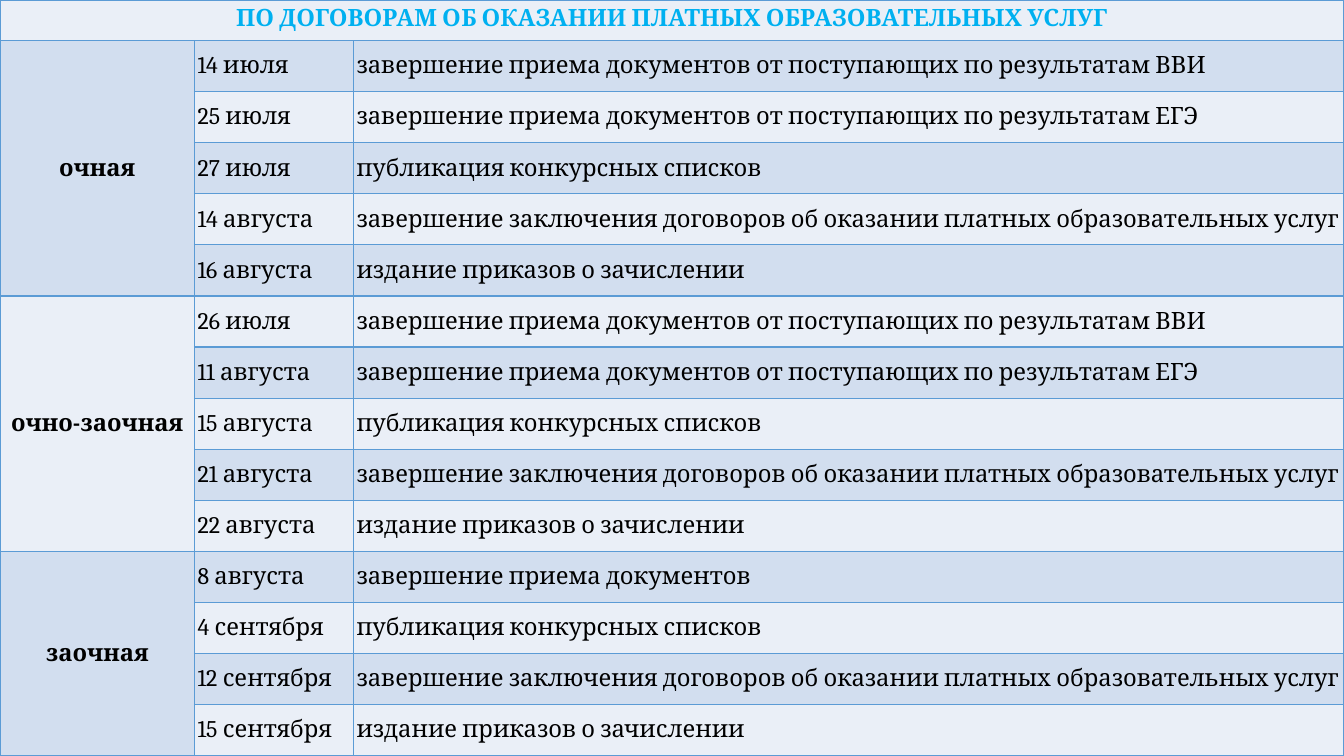
from lxml import etree
from pptx import Presentation
from pptx.dml.color import RGBColor
from pptx.enum.text import MSO_ANCHOR, PP_ALIGN
from pptx.oxml.ns import qn
from pptx.util import Pt

CENTER, LEFT = PP_ALIGN.CENTER, PP_ALIGN.LEFT
TOP, MIDDLE = MSO_ANCHOR.TOP, MSO_ANCHOR.MIDDLE

BLACK = RGBColor(0x00, 0x00, 0x00)
CYAN = RGBColor(0x00, 0xB0, 0xF0)
BORDER_BLUE = RGBColor(0x5B, 0x9B, 0xD5)
LIGHT_BAND = RGBColor(0xEA, 0xEF, 0xF7)
DARK_BAND = RGBColor(0xD2, 0xDE, 0xEF)

FONT_NAME = "Cambria"
FONT_SIZE = 17
SLIDE_WIDTH, SLIDE_HEIGHT = 960, 540
COLUMN_WIDTHS = (139, 113.5, 707.5)
HEADING_HEIGHT, ROW_HEIGHT = 29, 36.5

HEADING = "ПО ДОГОВОРАМ ОБ ОКАЗАНИИ ПЛАТНЫХ ОБРАЗОВАТЕЛЬНЫХ УСЛУГ"
DOCUMENTS = "завершение приема документов"
INTERNAL_EXAMS = DOCUMENTS + " от поступающих по результатам ВВИ"
STATE_EXAMS = DOCUMENTS + " от поступающих по результатам ЕГЭ"
RANKING = "публикация конкурсных списков"
CONTRACTS = "завершение заключения договоров об оказании платных образовательных услуг"
ENROLMENT = "издание приказов о зачислении"

FULL_STAGES = (INTERNAL_EXAMS, STATE_EXAMS, RANKING, CONTRACTS, ENROLMENT)
SHORT_STAGES = (DOCUMENTS, RANKING, CONTRACTS, ENROLMENT)
STUDY_FORMS = (
    ("очная", ("14 июля", "25 июля", "27 июля", "14 августа", "16 августа"), FULL_STAGES),
    ("очно-заочная",
     ("26 июля", "11 августа", "15 августа", "21 августа", "22 августа"), FULL_STAGES),
    ("заочная", ("8 августа", "4 сентября", "12 сентября", "15 сентября"), SHORT_STAGES),
)


def add_borders(cell):
    properties = cell._tc.get_or_add_tcPr()
    for side in ("a:lnL", "a:lnR", "a:lnT", "a:lnB"):
        line = etree.SubElement(properties, qn(side), w=str(Pt(1)))
        fill = etree.SubElement(line, qn("a:solidFill"))
        etree.SubElement(fill, qn("a:srgbClr"), val=str(BORDER_BLUE))


def add_schedule_table(slide):
    """Add the empty table with its grid, borders and alternating row fills."""
    row_count = 1 + sum(len(dates) for _, dates, _ in STUDY_FORMS)
    table = slide.shapes.add_table(
        row_count, len(COLUMN_WIDTHS), 0, 0, Pt(SLIDE_WIDTH), Pt(SLIDE_HEIGHT)
    ).table
    table.first_row = False
    table.horz_banding = False
    for column, width in zip(table.columns, COLUMN_WIDTHS):
        column.width = Pt(width)
    for index, row in enumerate(table.rows):
        row.height = Pt(ROW_HEIGHT if index else HEADING_HEIGHT)
        for cell in row.cells:
            add_borders(cell)
            cell.fill.solid()
            cell.fill.fore_color.rgb = DARK_BAND if index % 2 else LIGHT_BAND
    return table


def write_cell(cell, text, bold=False, color=BLACK, alignment=LEFT, anchor=MIDDLE):
    cell.vertical_anchor = anchor
    paragraph = cell.text_frame.paragraphs[0]
    paragraph.alignment = alignment
    run = paragraph.add_run()
    run.text = text
    run.font.name = FONT_NAME
    run.font.size = Pt(FONT_SIZE)
    run.font.bold = bold
    run.font.color.rgb = color


def write_entry(cell, text):
    """Write a date or stage with narrow side margins."""
    cell.margin_left = cell.margin_right = Pt(2.2)
    cell.margin_top = cell.margin_bottom = Pt(7.2)
    write_cell(cell, text)


def write_study_form(table, first_row, name, dates, stages):
    form_cell = table.cell(first_row, 0)
    form_cell.merge(table.cell(first_row + len(dates) - 1, 0))
    write_cell(form_cell, name, bold=True, alignment=CENTER)
    for row, (date, stage) in enumerate(zip(dates, stages), first_row):
        write_entry(table.cell(row, 1), date)
        write_entry(table.cell(row, 2), stage)


def main():
    presentation = Presentation()
    presentation.slide_width = Pt(SLIDE_WIDTH)
    presentation.slide_height = Pt(SLIDE_HEIGHT)
    blank_layout = presentation.slide_layouts[6]
    slide = presentation.slides.add_slide(blank_layout)

    table = add_schedule_table(slide)
    heading_cell = table.cell(0, 0)
    heading_cell.merge(table.cell(0, len(COLUMN_WIDTHS) - 1))
    write_cell(heading_cell, HEADING, bold=True, color=CYAN, alignment=CENTER, anchor=TOP)

    first_row = 1
    for name, dates, stages in STUDY_FORMS:
        write_study_form(table, first_row, name, dates, stages)
        first_row += len(dates)

    presentation.save("out.pptx")


if __name__ == "__main__":
    main()
